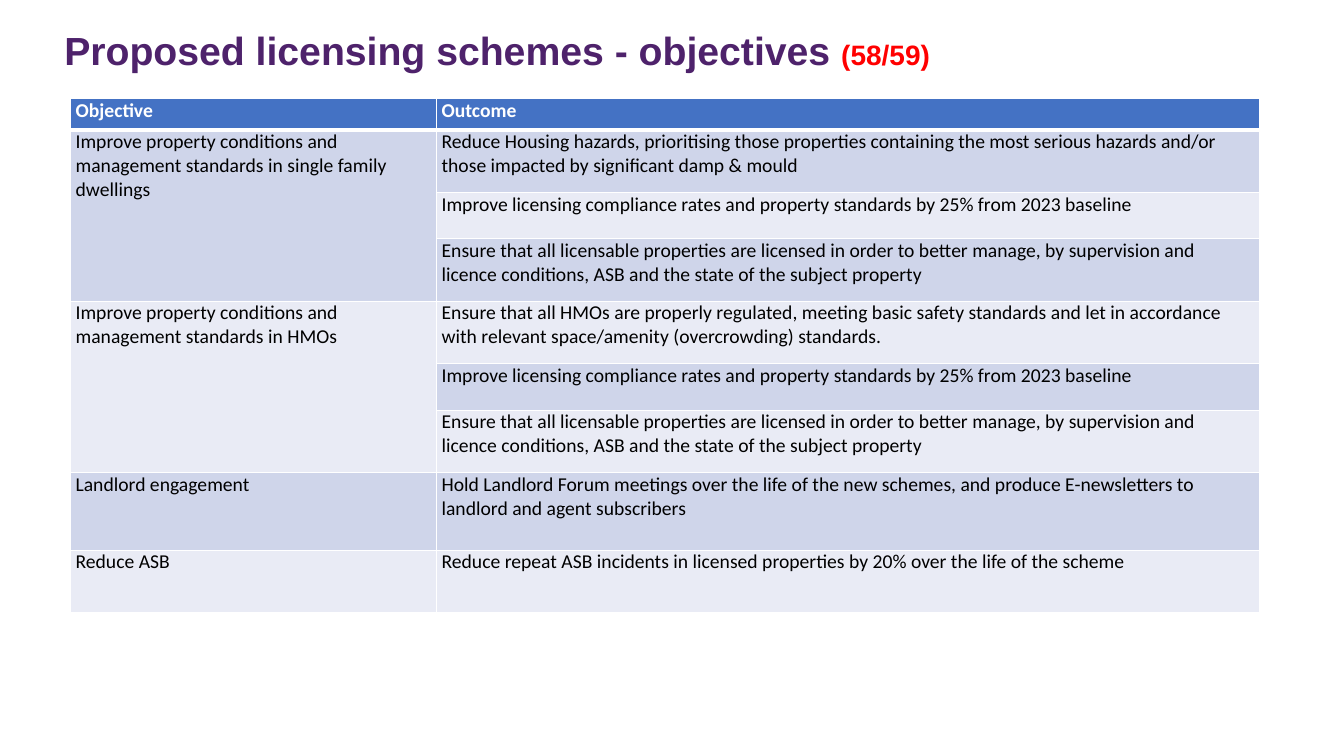
from lxml import etree
from pptx import Presentation
from pptx.dml.color import RGBColor
from pptx.enum import text
from pptx.oxml import ns
from pptx.util import Inches, Pt

COLOURS = {
    "title": "4E226B",
    "reference": "FF0000",
    "header": "4472C4",
    "odd_band": "CFD5EA",
    "even_band": "E9EBF5",
    "border": "FFFFFF",
    "header_text": "FFFFFF",
    "body_text": "000000",
}

COMPLIANCE = "Improve licensing compliance rates and property standards by 25% from 2023 baseline"
LICENSING = (
    "Ensure that all licensable properties are licensed in order to better manage, "
    "by supervision and licence conditions, ASB and the state of the subject property"
)

# Each objective with its outcomes and their row heights in inches
OBJECTIVES = [
    ("Improve property conditions and management standards in single family dwellings", [
        ("Reduce Housing hazards, prioritising those properties containing the most serious "
         "hazards and/or those impacted by significant damp & mould", 0.62),
        (COMPLIANCE, 0.46),
        (LICENSING, 0.62),
    ]),
    ("Improve property conditions and management standards in HMOs", [
        ("Ensure that all HMOs are properly regulated, meeting basic safety standards and let "
         "in accordance with relevant space/amenity (overcrowding) standards.", 0.62),
        (COMPLIANCE, 0.46),
        (LICENSING, 0.62),
    ]),
    ("Landlord engagement", [
        ("Hold Landlord Forum meetings over the life of the new schemes, and produce "
         "E-newsletters to landlord and agent subscribers", 0.77),
    ]),
    ("Reduce ASB", [
        ("Reduce repeat ASB incidents in licensed properties by 20% over the life of the scheme", 0.62),
    ]),
]
HEADER_HEIGHT = 0.31
COLUMN_WIDTHS = (3.63, 8.16)


def colour(name):
    return RGBColor.from_string(COLOURS[name])


def add_title(slide, parts):
    title = slide.shapes.add_textbox(Inches(0.54), Inches(0.22), Inches(12), Inches(0.5))
    frame = title.text_frame
    frame.word_wrap = True
    frame.margin_top = Inches(0.09)
    frame.margin_bottom = 0
    heading = frame.paragraphs[0]
    heading.line_spacing = 0.9
    heading.font.name = "Arial"
    heading.font.bold = True
    for wording, size, colour_name in parts:
        run = heading.add_run()
        run.text = wording
        run.font.size = Pt(size)
        run.font.color.rgb = colour(colour_name)


def add_borders(cell, bottom_width):
    properties = cell._tc.get_or_add_tcPr()
    for side, width in (("L", 1), ("R", 1), ("T", 1), ("B", bottom_width)):
        line = etree.SubElement(properties, ns.qn(f"a:ln{side}"), w=str(Pt(width)))
        fill = etree.SubElement(line, ns.qn("a:solidFill"))
        etree.SubElement(fill, ns.qn("a:srgbClr"), val=COLOURS["border"])


def style_cell(cell, fill_name, header):
    add_borders(cell, 3 if header else 1)
    cell.fill.solid()
    cell.fill.fore_color.rgb = colour(fill_name)
    cell.margin_left = cell.margin_right = Inches(0.05)
    cell.margin_top = cell.margin_bottom = 0
    cell.vertical_anchor = text.MSO_ANCHOR.TOP
    font = cell.text_frame.paragraphs[0].font
    font.name = "Calibri"
    font.size = Pt(14)
    font.bold = header
    font.color.rgb = colour("header_text" if header else "body_text")


def add_objectives_table(slide):
    heights = [HEADER_HEIGHT] + [height for _, outcomes in OBJECTIVES for _, height in outcomes]
    table = slide.shapes.add_table(
        len(heights), len(COLUMN_WIDTHS), Inches(0.7), Inches(0.98),
        Inches(sum(COLUMN_WIDTHS)), Inches(sum(heights)),
    ).table
    for column, width in zip(table.columns, COLUMN_WIDTHS):
        column.width = Inches(width)
    for row, height in zip(table.rows, heights):
        row.height = Inches(height)

    # Wording, with one objective spanning all of its outcomes
    table.cell(0, 0).text = "Objective"
    table.cell(0, 1).text = "Outcome"
    first = 1
    for objective, outcomes in OBJECTIVES:
        table.cell(first, 0).text = objective
        for offset, (outcome, _) in enumerate(outcomes):
            table.cell(first + offset, 1).text = outcome
        if len(outcomes) > 1:
            table.cell(first, 0).merge(table.cell(first + len(outcomes) - 1, 0))
        first += len(outcomes)

    # Alternating bands below the header
    for number, row in enumerate(table.rows):
        band = "odd_band" if number % 2 else "even_band"
        for cell in row.cells:
            style_cell(cell, band if number else "header", number == 0)


def main():
    deck = Presentation()
    deck.slide_width = Inches(13.33)
    deck.slide_height = Inches(7.5)
    slide = deck.slides.add_slide(deck.slide_layouts[6])
    add_title(slide, [
        ("Proposed licensing schemes - objectives ", 28, "title"),
        ("(58/59)", 20, "reference"),
    ])
    add_objectives_table(slide)
    deck.save("out.pptx")


if __name__ == "__main__":
    main()
